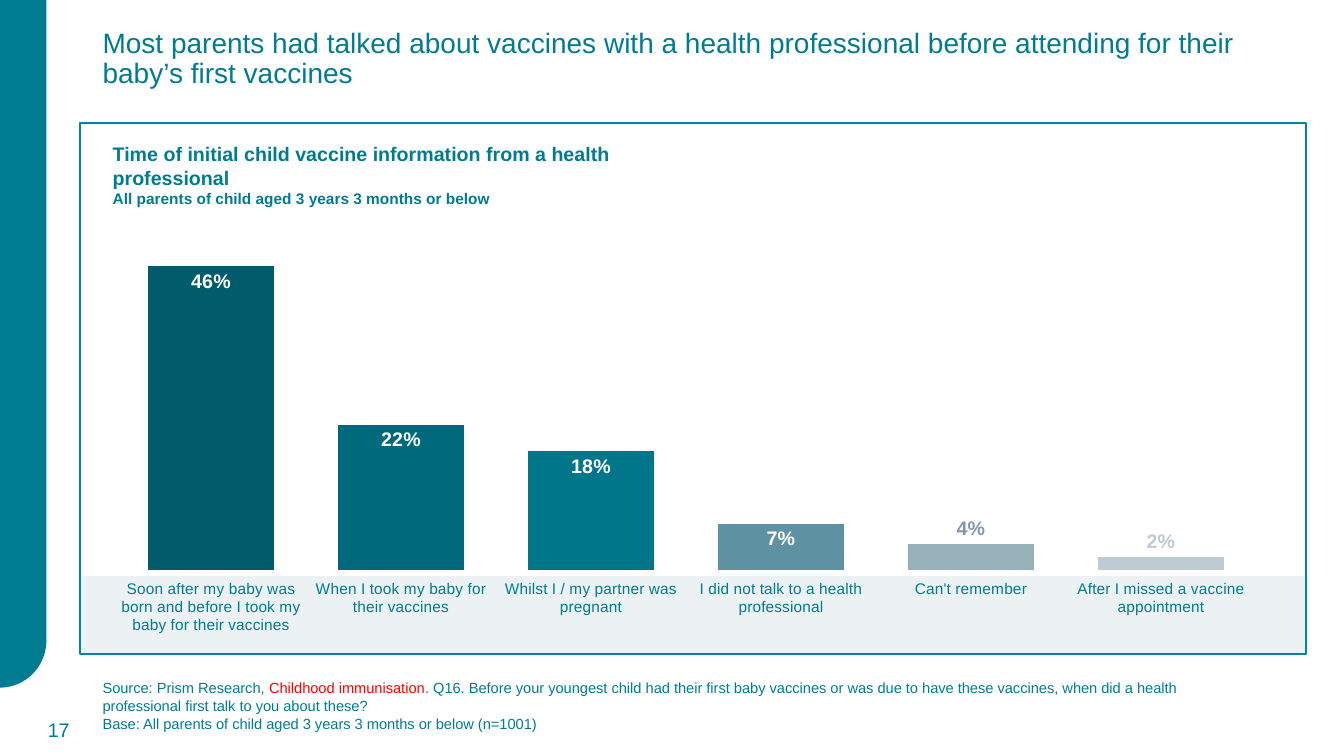
from math import cos, pi, sin

from lxml.etree import SubElement
from pptx import Presentation
from pptx.chart.data import CategoryChartData
from pptx.dml.color import RGBColor
from pptx.enum.chart import XL_CHART_TYPE, XL_LABEL_POSITION, XL_TICK_MARK
from pptx.enum.shapes import MSO_SHAPE
from pptx.enum.text import MSO_ANCHOR, PP_ALIGN
from pptx.oxml.ns import qn
from pptx.util import Pt

COLORS = {
    "teal": "007C91",
    "frame": "00879E",
    "strip": "ECF1F4",
    "red": "FF0000",
    "white": "FFFFFF",
}
FONT = "Arial"

TITLE = ("Most parents had talked about vaccines with a health professional "
         "before attending for their baby’s first vaccines")
HEADINGS = [
    ("Time of initial child vaccine information from a health professional", 14),
    ("All parents of child aged 3 years 3 months or below", 11),
]
SOURCE = [
    [
        ("Source: Prism Research, ", "teal"),
        ("Childhood immunisation", "red"),
        (". Q16. Before your youngest child had their first baby vaccines or was due to "
         "have these vaccines, when did a health professional first talk to you about these?",
         "teal"),
    ],
    [("Base: All parents of child aged 3 years 3 months or below (n=1001)", "teal")],
]
PAGE_NUMBER = "17"

ANSWERS = [
    ("Soon after my baby was born and before I took my baby for their vaccines", 0.46, "005C6B"),
    ("When I took my baby for their vaccines", 0.22, "006A7C"),
    ("Whilst I / my partner was pregnant", 0.18, "00768B"),
    ("I did not talk to a health professional", 0.07, "5E91A1"),
    ("Can't remember", 0.04, "97B1BB"),
    ("After I missed a vaccine appointment", 0.02, "BDCCD2"),
]
OUTSIDE_LABELS = {4: "8497B0", 5: "BDCCD2"}
PLOT_LAYOUT = {"x": 0.02, "y": 0.02, "w": 0.96, "h": 0.805}

FRAME_LEFT, FRAME_TOP, FRAME_WIDTH, FRAME_BOTTOM = 57.2, 88, 876, 467.5
STRIP_TOP = 411.6
SIDEBAR_WIDTH, SIDEBAR_STRAIGHT, SIDEBAR_CURVE = 33.2, 457.2, 34
CURVE_STEPS = 24


def rgb(value):
    return RGBColor.from_string(value)


def set_font(font, size, color, bold=False):
    font.name = FONT
    font.size = Pt(size)
    font.bold = bold
    font.color.rgb = rgb(color)


def add_sidebar(page):
    angles = [pi / 2 * step / CURVE_STEPS for step in range(CURVE_STEPS + 1)]
    curve = [(Pt(SIDEBAR_WIDTH * cos(angle)), Pt(SIDEBAR_STRAIGHT + SIDEBAR_CURVE * sin(angle)))
             for angle in angles]
    outline = page.shapes.build_freeform(0, 0)
    outline.add_line_segments([(Pt(SIDEBAR_WIDTH), 0)] + curve, close=True)
    sidebar = outline.convert_to_shape()
    sidebar.shadow.inherit = False
    sidebar.fill.solid()
    sidebar.fill.fore_color.rgb = rgb(COLORS["teal"])
    sidebar.line.fill.background()


def add_panel(page, top, fill=None, line=None):
    panel = page.shapes.add_shape(MSO_SHAPE.RECTANGLE, Pt(FRAME_LEFT), Pt(top),
                                  Pt(FRAME_WIDTH), Pt(FRAME_BOTTOM - top))
    panel.shadow.inherit = False
    if fill:
        panel.fill.solid()
        panel.fill.fore_color.rgb = rgb(fill)
    else:
        panel.fill.background()
    if line:
        panel.line.color.rgb = rgb(line)
        panel.line.width = Pt(1.5)
    else:
        panel.line.fill.background()


def add_text(page, left, top, width, height, anchor=MSO_ANCHOR.MIDDLE):
    frame = page.shapes.add_textbox(Pt(left), Pt(top), Pt(width), Pt(height)).text_frame
    frame.word_wrap = True
    frame.vertical_anchor = anchor
    return frame


def next_paragraph(frame, index):
    return frame.add_paragraph() if index else frame.paragraphs[0]


def add_answer_chart(page):
    data = CategoryChartData(number_format="0%")
    data.categories = [answer for answer, share, color in ANSWERS]
    data.add_series("Series 1", [share for answer, share, color in ANSWERS])
    chart = page.shapes.add_chart(XL_CHART_TYPE.COLUMN_CLUSTERED, Pt(66), Pt(165.6),
                                  Pt(848.2), Pt(293), data).chart
    chart.has_legend = False
    chart.has_title = False
    set_font(chart.font, 11, COLORS["teal"])

    value_axis = chart.value_axis
    value_axis.minimum_scale = 0
    value_axis.maximum_scale = 0.5
    value_axis.has_major_gridlines = False
    value_axis.visible = False

    category_axis = chart.category_axis
    category_axis.major_tick_mark = XL_TICK_MARK.OUTSIDE
    category_axis.format.line.fill.background()
    set_font(category_axis.tick_labels.font, 11, COLORS["teal"])

    plot = chart.plots[0]
    plot.gap_width = 50
    plot.overlap = -27
    plot.vary_by_categories = False
    series = plot.series[0]
    labels = series.data_labels
    labels.show_value = True
    labels.number_format = "0%"
    labels.number_format_is_linked = False
    labels.position = XL_LABEL_POSITION.INSIDE_END
    set_font(labels.font, 14, COLORS["white"], bold=True)

    for index, (answer, share, color) in enumerate(ANSWERS):
        fill = series.points[index].format.fill
        fill.solid()
        fill.fore_color.rgb = rgb(color)
    for index, color in OUTSIDE_LABELS.items():
        label = series.points[index].data_label
        set_font(label.font, 14, color, bold=True)
        label.position = XL_LABEL_POSITION.OUTSIDE_END

    plot_area = chart.element.find(".//" + qn("c:plotArea"))
    layout = plot_area.find(qn("c:layout"))
    if layout is None:
        layout = SubElement(plot_area, qn("c:layout"))
        plot_area.insert(0, layout)
    manual = SubElement(layout, qn("c:manualLayout"))
    settings = {"layoutTarget": "inner", "xMode": "edge", "yMode": "edge", **PLOT_LAYOUT}
    for name, value in settings.items():
        SubElement(manual, qn("c:" + name)).set("val", str(value))


def main():
    deck = Presentation()
    deck.slide_width, deck.slide_height = Pt(960), Pt(540)
    page = deck.slides.add_slide(deck.slide_layouts[6])

    add_sidebar(page)
    add_panel(page, STRIP_TOP, fill=COLORS["strip"])
    add_panel(page, FRAME_TOP, line=COLORS["frame"])

    title = add_text(page, 66.2, 0.7, 828, 104.4)
    title.margin_bottom = Pt(24.3)
    para = title.paragraphs[0]
    para.text = TITLE
    para.line_spacing = 0.9
    set_font(para.font, 20, COLORS["teal"])

    source = add_text(page, 66.2, 489.6, 835.2, 28.8)
    for index, parts in enumerate(SOURCE):
        para = next_paragraph(source, index)
        for text, color in parts:
            span = para.add_run()
            span.text = text
            set_font(span.font, 10.5, COLORS[color])

    number = add_text(page, 10, 506.9, 46.8, 28.8)
    para = number.paragraphs[0]
    para.text = PAGE_NUMBER
    para.alignment = PP_ALIGN.RIGHT
    set_font(para.font, 14, COLORS["teal"])

    heading = add_text(page, 73.4, 97.9, 455, 37.4, MSO_ANCHOR.TOP)
    heading.margin_right = Pt(40)
    for index, (text, size) in enumerate(HEADINGS):
        para = next_paragraph(heading, index)
        para.text = text
        set_font(para.font, size, COLORS["teal"], bold=True)

    add_answer_chart(page)
    deck.save("out.pptx")


if __name__ == "__main__":
    main()
